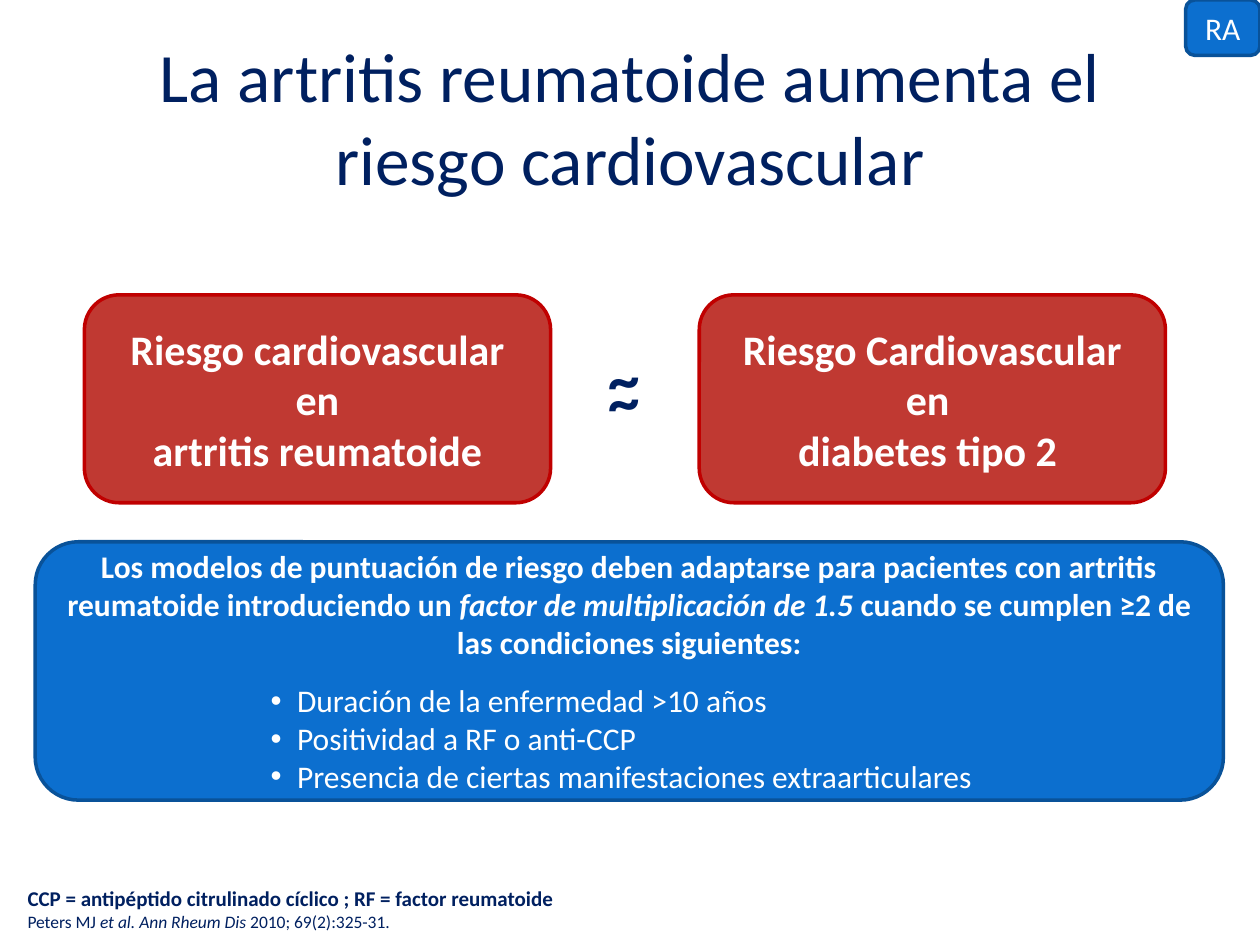
"""Build a slide on cardiovascular risk in rheumatoid arthritis."""
from lxml import etree
from pptx import Presentation
from pptx.dml.color import RGBColor
from pptx.enum import shapes, text
from pptx.oxml.ns import qn
from pptx.util import Inches, Pt

THEME = {
    "font": "Calibri",
    "navy": "002060", "white": "FFFFFF",
    "blue": ("0C6FCF", "095299"), "red": ("C03932", "C00000"),
    "title": 39.6, "symbol": 36, "risk": 24, "body": 18, "note": 12, "source": 10,
}

TITLE = "La artritis reumatoide aumenta el riesgo cardiovascular"
TAG = "RA"
RISKS = [
    "Riesgo cardiovascular en\vartritis reumatoide",
    "Riesgo Cardiovascular en \vdiabetes tipo 2 ",
]
ADVICE = [
    ("Los modelos de puntuación de riesgo deben adaptarse para pacientes con artritis "
     "reumatoide introduciendo un ", "b"),
    ("factor de multiplicación de 1.5 ", "bi"),
    ("cuando se cumplen ≥2 de las condiciones siguientes:", "b"),
]
CONDITIONS = [
    "Duración de la enfermedad >10 años",
    "Positividad a RF o anti-CCP",
    "Presencia de ciertas manifestaciones extraarticulares",
]
ABBREVIATIONS = [("CCP = antipéptido citrulinado cíclico ; RF = factor reumatoide", "b")]
CITATION = [("Peters MJ ", ""), ("et al. Ann Rheum Dis ", "i"), ("2010; 69(2):325-31.", "")]


def color(name):
    return RGBColor.from_string(name)


def write(paragraph, runs, size, ink, align=None):
    paragraph.alignment = align
    for words, style in runs:
        first = len(paragraph.runs)
        if "\v" in words:
            paragraph.text = words
        else:
            paragraph.add_run().text = words
        for run in paragraph.runs[first:]:
            font = run.font
            font.name, font.size = THEME["font"], Pt(THEME[size])
            font.color.rgb = color(THEME[ink])
            font.bold, font.italic = "b" in style, "i" in style


def add_bullet(paragraph):
    properties = paragraph._p.get_or_add_pPr()
    properties.set("lvl", "3")
    properties.set("marL", str(Inches(1.88)))
    properties.set("indent", str(Inches(-0.21)))
    etree.SubElement(properties, qn("a:buFont")).set("typeface", "Arial")
    etree.SubElement(properties, qn("a:buChar")).set("char", "•")


def add_box(slide, place, palette):
    box = slide.shapes.add_shape(
        shapes.MSO_SHAPE.ROUNDED_RECTANGLE, *map(Inches, place))
    fill, line = THEME[palette]
    box.shadow.inherit = False
    box.fill.solid()
    box.fill.fore_color.rgb = color(fill)
    box.line.color.rgb = color(line)
    box.line.width = Pt(2)
    frame = box.text_frame
    frame.word_wrap = True
    frame.vertical_anchor = text.MSO_ANCHOR.MIDDLE
    return frame


def add_label(container, place):
    frame = container.add_textbox(*map(Inches, place)).text_frame
    frame.word_wrap = False
    frame.auto_size = text.MSO_AUTO_SIZE.SHAPE_TO_FIT_TEXT
    return frame


def main():
    center = text.PP_ALIGN.CENTER
    presentation = Presentation()
    presentation.slide_width, presentation.slide_height = Inches(10), Inches(7.5)
    slide = presentation.slides.add_slide(presentation.slide_layouts[5])

    title = slide.shapes.title
    title.left, title.top, title.width, title.height = map(Inches, (0.5, 0.3, 9, 1.25))
    title.text_frame.vertical_anchor = text.MSO_ANCHOR.MIDDLE
    write(title.text_frame.paragraphs[0], [(TITLE, "")], "title", "navy", center)

    notes = add_label(slide.shapes, (0.12, 6.98, 4.61, 0.47))
    write(notes.paragraphs[0], ABBREVIATIONS, "note", "navy")
    write(notes.add_paragraph(), CITATION, "source", "navy")

    advice = add_box(slide, (0.28, 4.3, 9.43, 2.05), "blue")
    write(advice.paragraphs[0], ADVICE, "body", "white", center)
    advice.paragraphs[0].space_after = Pt(12)
    for condition in CONDITIONS:
        paragraph = advice.add_paragraph()
        add_bullet(paragraph)
        write(paragraph, [(condition, "")], "body", "white", text.PP_ALIGN.LEFT)

    for index, risk in enumerate(RISKS):
        frame = add_box(slide, (0.67 + index * 4.88, 2.34, 3.7, 1.65), "red")
        write(frame.paragraphs[0], [(risk, "b")], "risk", "white", center)

    approximately = slide.shapes.add_group_shape()
    for top in (2.64, 2.81):
        tilde = add_label(approximately.shapes, (4.73, top, 0.45, 0.71))
        write(tilde.paragraphs[0], [("~", "b")], "symbol", "navy")

    tag = add_box(slide, (9.41, 0, 0.59, 0.44), "blue")
    write(tag.paragraphs[0], [(TAG, "")], "body", "white", center)

    presentation.save("out.pptx")


if __name__ == "__main__":
    main()
